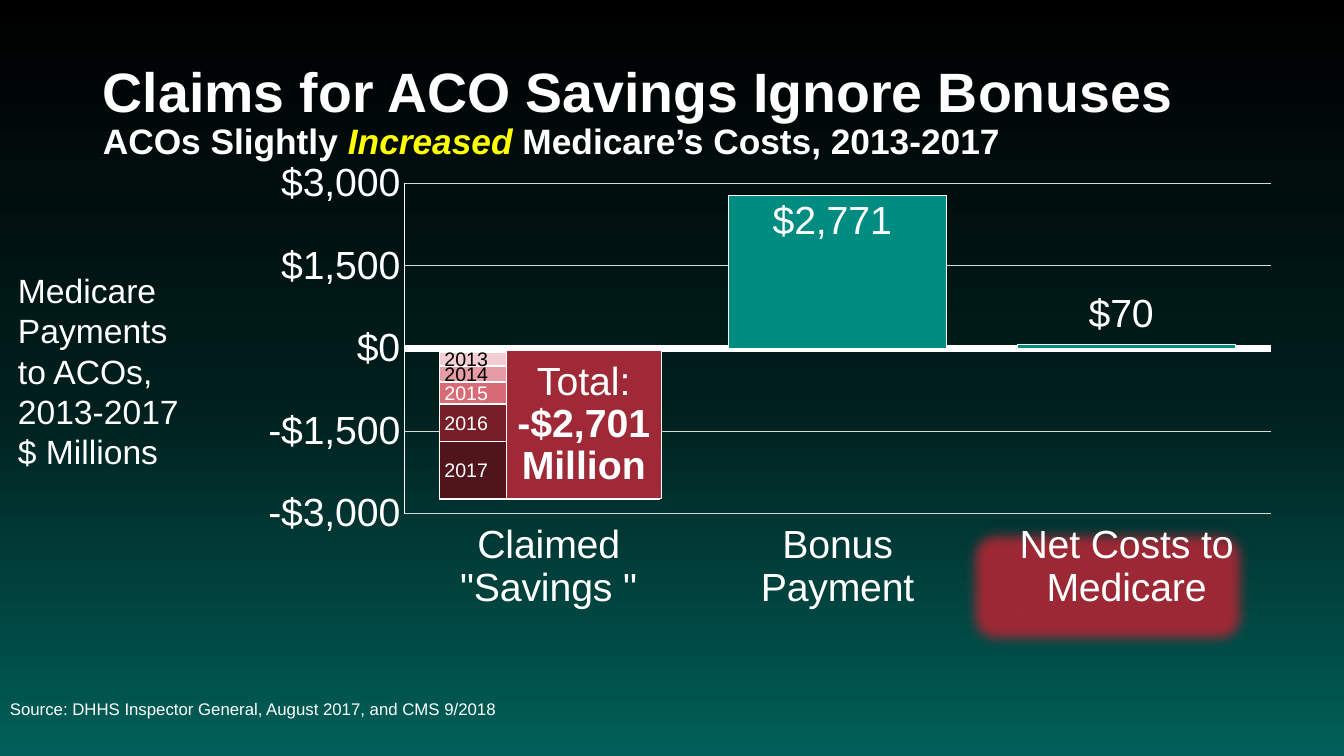
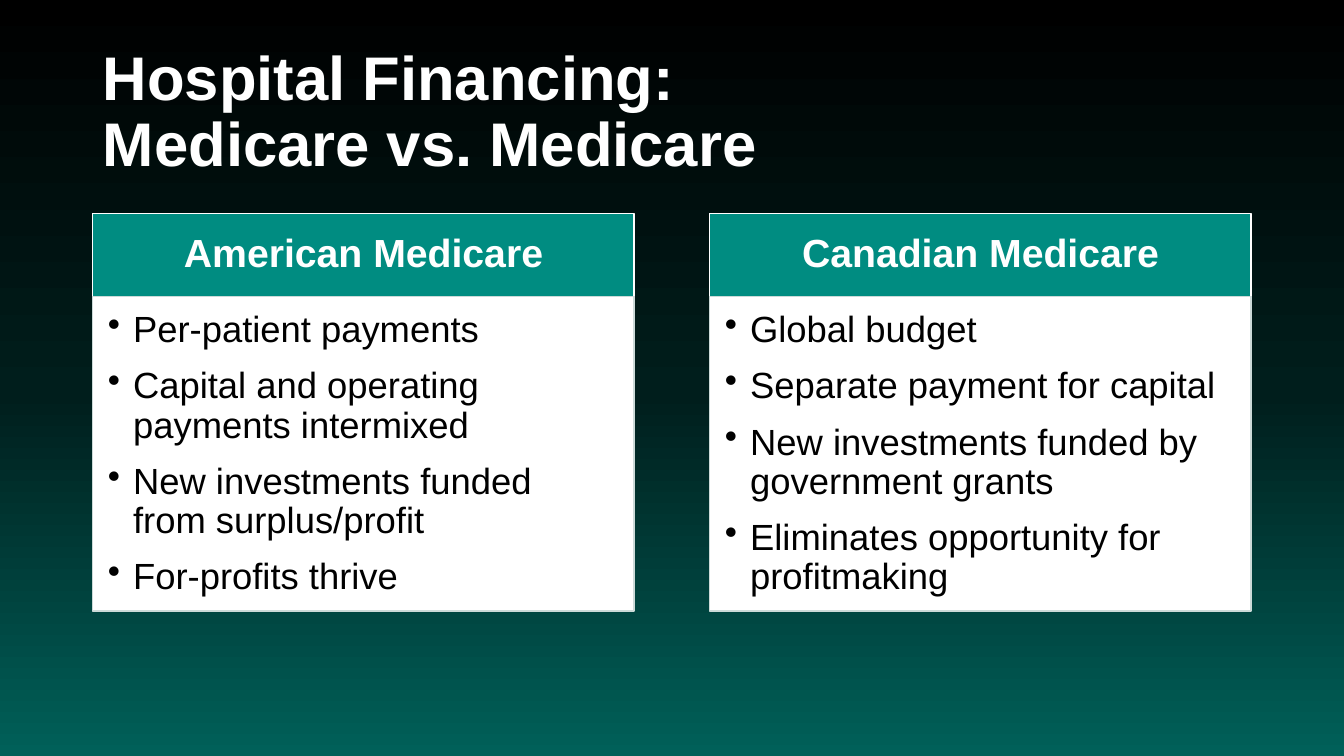
from copy import deepcopy

from lxml.etree import SubElement
from pptx import Presentation
from pptx.chart.data import CategoryChartData
from pptx.dml.color import RGBColor
from pptx.enum.chart import (XL_CHART_TYPE, XL_LABEL_POSITION,
                             XL_TICK_LABEL_POSITION, XL_TICK_MARK)
from pptx.enum.shapes import MSO_SHAPE
from pptx.enum.text import MSO_ANCHOR, MSO_AUTO_SIZE, PP_ALIGN
from pptx.oxml.ns import qn
from pptx.util import Inches, Pt

COLORS = {
    "black": "000000", "deep": "001E1C", "teal": "006059",
    "accent": "008C81", "red": "9F2936", "white": "FFFFFF",
    "yellow": "FFFF00", "grid": "D9D9D9", "edge": "CCDAD8",
    "2013": "F2CED2", "2014": "E69CA4", "2015": "D96B77",
    "2016": "771F28", "2017": "50141B",
}
RGB = {name: RGBColor.from_string(value) for name, value in COLORS.items()}
FONT = "Arial"


def add_panel(page, preset, box, fill, line=None, line_width=1):
    panel = page.shapes.add_shape(preset, *map(Inches, box))
    panel.shadow.inherit = False
    panel.fill.solid()
    panel.fill.fore_color.rgb = RGB[fill]
    if line:
        panel.line.color.rgb = RGB[line]
        panel.line.width = Pt(line_width)
    else:
        panel.line.fill.background()
    return panel


def write_lines(frame, lines, size, color="white", bold=False, spacing=None,
                align=PP_ALIGN.LEFT, anchor=MSO_ANCHOR.TOP, wrap=True,
                bullets=False):
    """Fill a text frame with one paragraph per line."""
    frame.word_wrap = wrap
    frame.vertical_anchor = anchor
    for index, line in enumerate(lines):
        para = frame.add_paragraph() if index else frame.paragraphs[0]
        para.text = line
        para.alignment = align
        para.line_spacing = spacing
        if bullets:
            para.space_after = Pt(12)
            properties = para._p.get_or_add_pPr()
            properties.set("marL", str(Inches(0.25)))
            properties.set("indent", str(-Inches(0.25)))
            SubElement(properties, qn("a:buChar")).set("char", "•")
        para.font.name = FONT
        para.font.size = Pt(size)
        para.font.bold = bold
        para.font.color.rgb = RGB[color]


deck = Presentation()
deck.slide_width, deck.slide_height = Inches(13.33), Inches(7.5)

# Shared gradient background
master = deck.slide_master
background = master.background.fill
background.gradient()
background.gradient_angle = 270
stop_list = master.element.find(".//" + qn("a:gsLst"))
stop_list.append(deepcopy(stop_list[0]))
for stop, (position, color) in zip(
        background.gradient_stops, [(0, "black"), (0.52, "deep"), (1, "teal")]):
    stop.position = position
    stop.color.rgb = RGB[color]

# Pages and their titles: lines of (text, size, colour, italic)
TITLES = [
    [[("Claims for ACO Savings Ignore Bonuses", 39.6, "white", False)],
     [("ACOs Slightly ", 25.2, "white", False),
      ("Increased", 25.2, "yellow", True),
      (" Medicare’s Costs, 2013-2017", 25.2, "white", False)]],
    [[("Hospital Financing:", 44, "white", False)],
     [("Medicare vs. Medicare", 44, "white", False)]],
]
pages = []
for title_lines in TITLES:
    page = deck.slides.add_slide(deck.slide_layouts[5])
    pages.append(page)
    title = page.shapes.title
    title.left, title.top = Inches(0.92), Inches(0.4)
    title.width, title.height = Inches(11.5), Inches(1.45)
    frame = title.text_frame
    frame.auto_size = MSO_AUTO_SIZE.NONE
    frame.vertical_anchor = MSO_ANCHOR.MIDDLE
    para = frame.paragraphs[0]
    para.alignment = PP_ALIGN.LEFT
    para.line_spacing = 0.9
    para.font.name = FONT
    para.font.bold = True
    para.font.size = Pt(title_lines[0][0][1])
    for index, spans in enumerate(title_lines):
        if index:
            para.add_line_break()
        for text, size, color, italic in spans:
            span = para.add_run()
            span.text = text
            span.font.size = Pt(size)
            span.font.color.rgb = RGB[color]
            span.font.italic = italic
savings_page, hospital_page = pages

# Slide 1: glow, source and axis caption
glow = add_panel(savings_page, MSO_SHAPE.ROUNDED_RECTANGLE,
                 (9.56, 5.2, 2.85, 1.24), "red")
effects = glow.element.find(".//" + qn("a:effectLst"))
SubElement(effects, qn("a:softEdge")).set("rad", str(Inches(0.12)))

source = savings_page.shapes.add_textbox(
    Inches(0), Inches(6.58), Inches(9), Inches(0.92))
write_lines(source.text_frame,
            ["Source: DHHS Inspector General, August 2017, and CMS 9/2018"],
            12, spacing=0.9, anchor=MSO_ANCHOR.MIDDLE)
caption = savings_page.shapes.add_textbox(
    Inches(0.08), Inches(2.63), Inches(2.64), Inches(2.12))
write_lines(caption.text_frame,
            ["Medicare Payments", "to ACOs,", "2013-2017", "$ Millions"], 24)

# Slide 1: chart
data = CategoryChartData()
data.categories = ['Claimed\n"Savings "', "Bonus\nPayment",
                   "Net Costs to\nMedicare"]
data.add_series("Series 1", [-2701, 2771, 70])
chart = savings_page.shapes.add_chart(
    XL_CHART_TYPE.COLUMN_STACKED, Inches(2.17), Inches(1.59),
    Inches(10.5), Inches(4.77), data).chart
chart.has_title = False
chart.has_legend = False
chart.font.name = FONT
chart.font.size = Pt(28)
chart.font.color.rgb = RGB["white"]

for axis, line_width in [(chart.category_axis, 5), (chart.value_axis, 0.75)]:
    axis.major_tick_mark = axis.minor_tick_mark = XL_TICK_MARK.NONE
    axis.format.line.color.rgb = RGB["white"]
    axis.format.line.width = Pt(line_width)
chart.category_axis.tick_label_position = XL_TICK_LABEL_POSITION.LOW
values = chart.value_axis
values.minimum_scale, values.maximum_scale = -3000, 3000
values.major_unit = 1500
values.tick_labels.number_format = '"$"#,##0'
values.tick_labels.number_format_is_linked = False
values.major_gridlines.format.line.color.rgb = RGB["grid"]
values.major_gridlines.format.line.width = Pt(0.75)

plot = chart.plots[0]
plot.vary_by_categories = False
plot.gap_width, plot.overlap = 33, 100
series = plot.series[0]
series.invert_if_negative = False
series.format.fill.solid()
series.format.fill.fore_color.rgb = RGB["accent"]
series.format.line.color.rgb = RGB["white"]
series.format.line.width = Pt(0.75)
series.points[0].format.fill.background()

LABEL_FORMAT = '"$"#,##0_);[Red]\\("$"#,##0\\)'
labels = series.data_labels
labels.show_value = True
labels.number_format = LABEL_FORMAT
labels.number_format_is_linked = False
net_label = series.points[2].data_label
for label in (labels, net_label):
    label.position = XL_LABEL_POSITION.INSIDE_END
    label.font.name = FONT
    label.font.size = Pt(28)
    label.font.color.rgb = RGB["white"]

# The net label is lifted above its bar; the savings label is removed
chart_root = chart.element
net_element = chart_root.find(".//" + qn("c:dLbl"))
net_layout = SubElement(net_element, qn("c:layout"))
number_format = SubElement(net_element, qn("c:numFmt"))
number_format.set("formatCode", LABEL_FORMAT)
number_format.set("sourceLinked", "0")
net_element.insert(1, net_layout)
net_element.insert(2, number_format)

label_list = chart_root.find(".//" + qn("c:dLbls"))
removed = SubElement(label_list, qn("c:dLbl"))
SubElement(removed, qn("c:idx")).set("val", "0")
SubElement(removed, qn("c:delete")).set("val", "1")
label_list.insert(0, removed)

plot_area = chart_root.find(".//" + qn("c:plotArea"))
for old_layout in plot_area.findall(qn("c:layout")):
    plot_area.remove(old_layout)
plot_layout = SubElement(plot_area, qn("c:layout"))
plot_area.insert(0, plot_layout)
for layout, settings in [
        (net_layout, {"x": 0, "y": -0.115}),
        (plot_layout, {"layoutTarget": "inner", "xMode": "edge",
                       "yMode": "edge", "x": 0.175, "y": 0.048,
                       "w": 0.819, "h": 0.687})]:
    manual = SubElement(layout, qn("c:manualLayout"))
    for key, value in settings.items():
        SubElement(manual, qn("c:" + key)).set("val", str(value))

# Slide 1: savings by year, stacked downwards from zero
YEARS = [("2013", 0.13, "black"), ("2014", 0.16, "black"),
         ("2015", 0.22, "white"), ("2016", 0.37, "white"),
         ("2017", 0.57, "white")]
top = 3.5
year_labels = []
for year, height, color in YEARS:
    add_panel(savings_page, MSO_SHAPE.RECTANGLE, (4.36, top, 2.18, height),
              year, "white")
    year_labels.append((year, top + height / 2, color))
    top += height

total = add_panel(savings_page, MSO_SHAPE.RECTANGLE, (5.02, 3.48, 1.54, 1.47),
                  "red", "white", 0.75)
write_lines(total.text_frame, ["Total:", "-$2,701", "Million"], 28, bold=True,
            spacing=0.9, align=PP_ALIGN.CENTER, anchor=MSO_ANCHOR.MIDDLE,
            wrap=False)
total.text_frame.paragraphs[0].font.bold = False

for year, middle, color in year_labels:
    tag = savings_page.shapes.add_textbox(
        Inches(4.31), Inches(middle - 0.17), Inches(0.64), Inches(0.34))
    write_lines(tag.text_frame, [year], 14, color, wrap=False)

# Slide 2: two columns
COLUMNS = [
    ("American Medicare",
     ["Per-patient payments", "Capital and operating payments intermixed",
      "New investments funded from surplus/profit", "For-profits thrive"]),
    ("Canadian Medicare",
     ["Global budget", "Separate payment for capital",
      "New investments funded by government grants",
      "Eliminates opportunity for profitmaking"]),
]
for index, (heading, points) in enumerate(COLUMNS):
    left = 0.92 + index * 6.12
    header = add_panel(hospital_page, MSO_SHAPE.RECTANGLE,
                       (left, 2.12, 5.37, 0.82), "accent", "white")
    write_lines(header.text_frame, [heading], 28, bold=True, spacing=0.9,
                align=PP_ALIGN.CENTER, anchor=MSO_ANCHOR.MIDDLE)
    body = add_panel(hospital_page, MSO_SHAPE.RECTANGLE,
                     (left, 2.94, 5.37, 3.12), "white", "edge")
    frame = body.text_frame
    frame.margin_left = frame.margin_top = Inches(0.15)
    frame.margin_right, frame.margin_bottom = Inches(0.2), Inches(0.23)
    write_lines(frame, points, 26, "black", spacing=0.9, bullets=True)

deck.save("out.pptx")
